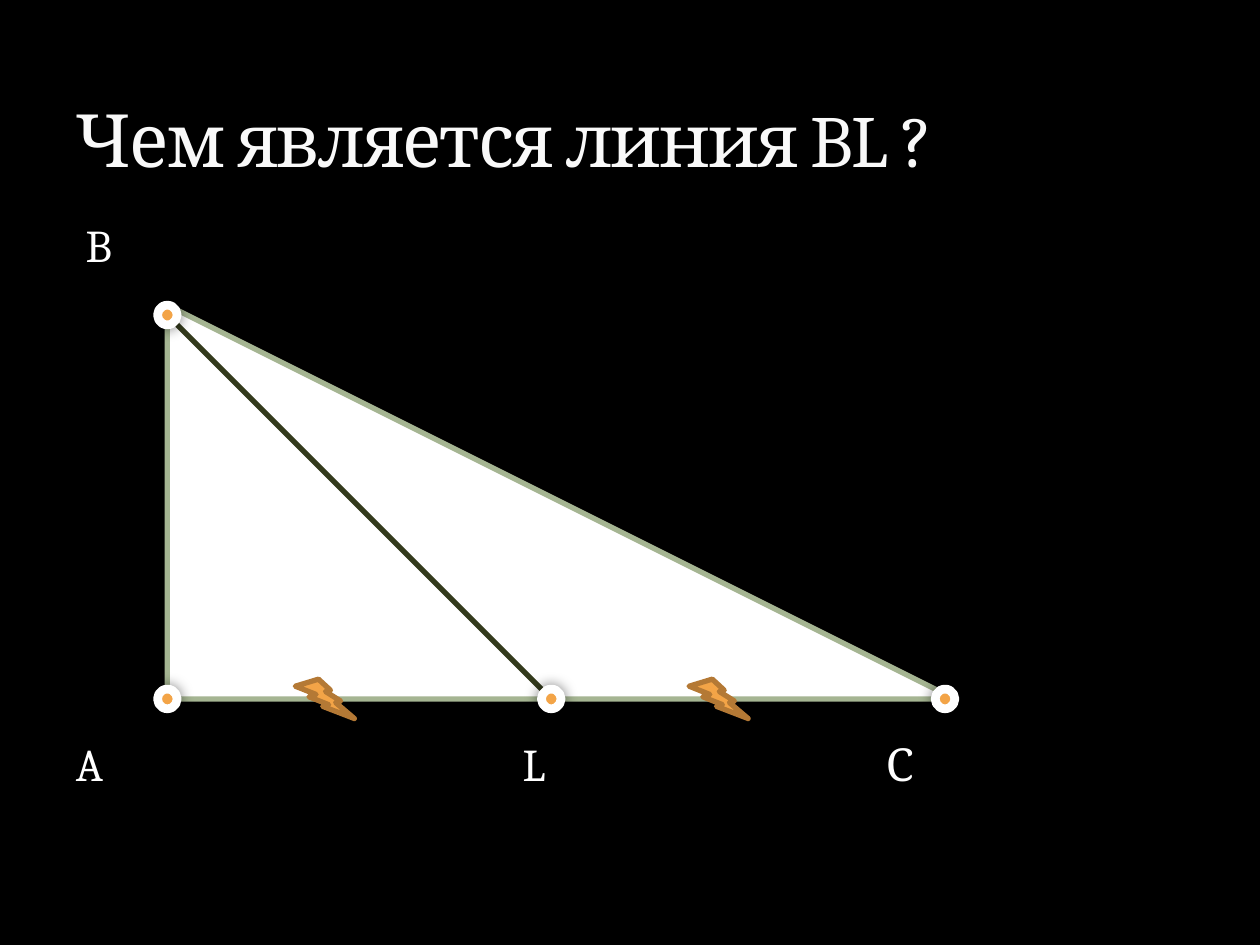
"""Build a geometry slide: a right triangle ABC with the line BL to side AC."""
from typing import NamedTuple

from lxml import etree
from pptx import Presentation
from pptx import util as u
from pptx.dml.color import RGBColor
from pptx.enum import shapes, text
from pptx.oxml import parse_xml
from pptx.oxml.ns import qn

WIDTH, HEIGHT = u.Inches(10), u.Inches(7.5)
COLUMNS, ROWS = 128, 96
FONT = "Cambria"
NAMESPACE = 'xmlns:a="http://schemas.openxmlformats.org/drawingml/2006/main"'


class Point(NamedTuple):
    column: float
    row: float


class Box(NamedTuple):
    column: float
    row: float
    columns: float
    rows: float


class Style(NamedTuple):
    fill: str
    line: str
    weight: float


class Label(NamedTuple):
    letter: str
    place: Point


A, B, L, C = Point(17, 71), Point(17, 32), Point(56, 71), Point(96, 71)
TRIANGLE = Box(17, 31, 80, 40)
BOLTS = [Box(column, 69, 6, 4) for column in (30, 70)]
LABELS = [
    Label("B", Point(8.7, 22)),
    Label("A", Point(7.7, 74.8)),
    Label("L", Point(53.1, 74.8)),
    Label("С", Point(90, 74.8)),
]
TRIANGLE_STYLE = Style("FFFFFF", "A5B592", 3)
BOLT_STYLE = Style("F3A447", "B47935", 3)
DOT_STYLE = Style("F3A447", "FFFFFF", 5)


def color(value: str) -> RGBColor:
    """Turn a hex string into a colour."""
    return RGBColor.from_string(value)


def x(columns: float) -> int:
    """Convert grid columns to a length."""
    return round(WIDTH * columns / COLUMNS)


def y(rows: float) -> int:
    """Convert grid rows to a length."""
    return round(HEIGHT * rows / ROWS)


def frame(box: Box) -> tuple[int, int, int, int]:
    """Convert a grid box to left, top, width and height."""
    return x(box.column), y(box.row), x(box.columns), y(box.rows)


def apply(target, values: dict) -> None:
    """Set each attribute named in a dict of format values."""
    for name, value in values.items():
        setattr(target, name, value)


def write(paragraph, words: str, size: float, value: str):
    """Write one formatted run and return it."""
    run = paragraph.add_run()
    run.text = words
    apply(run.font, {"name": FONT, "size": u.Pt(size), "bold": False})
    run.font.color.rgb = color(value)
    return run


def add_title(slide, words: str) -> None:
    """Place and format the title with its thin text outline."""
    title = slide.shapes.title
    apply(title, dict(zip(("left", "top", "width", "height"),
                          (u.Inches(0.5), u.Inches(0.17), u.Inches(9), u.Inches(1.33)))))
    apply(title.text_frame, {"vertical_anchor": text.MSO_ANCHOR.BOTTOM, "word_wrap": True,
                             "auto_size": text.MSO_AUTO_SIZE.NONE})
    paragraph = title.text_frame.paragraphs[0]
    paragraph.alignment = text.PP_ALIGN.LEFT
    properties = write(paragraph, words, 42, "F9F9F9").font._element
    properties.set("spc", "-100")
    properties.insert(0, parse_xml(
        f'<a:ln {NAMESPACE} w="3175"><a:solidFill><a:srgbClr val="3C4422">'
        '<a:alpha val="25000"/></a:srgbClr></a:solidFill></a:ln>'))


def add_figure(slide, kind: shapes.MSO_SHAPE, box: Box, style: Style):
    """Draw a preset shape with fill and outline."""
    shape = slide.shapes.add_shape(kind, *frame(box))
    shape.shadow.inherit = False
    shape.fill.solid()
    shape.fill.fore_color.rgb = color(style.fill)
    shape.line.color.rgb = color(style.line)
    shape.line.width = u.Pt(style.weight)
    return shape


def add_dot(slide, center: Point) -> None:
    """Mark a point with a ringed dot and a soft shadow."""
    box = Box(center.column - 1, center.row - 1, 2, 2)
    dot = add_figure(slide, shapes.MSO_SHAPE.OVAL, box, DOT_STYLE)
    dot._element.spPr.find(qn("a:effectLst")).append(parse_xml(
        f'<a:outerShdw {NAMESPACE} blurRad="95250" dist="0" dir="0" rotWithShape="0">'
        '<a:srgbClr val="000000"><a:alpha val="50000"/></a:srgbClr></a:outerShdw>'))


def add_segment(slide, start: Point, end: Point) -> None:
    """Draw a straight line between two points."""
    line = slide.shapes.add_connector(shapes.MSO_CONNECTOR.STRAIGHT, x(start.column),
                                      y(start.row), x(end.column), y(end.row))
    line.line.color.rgb = color("333A1C")
    line.line.width = u.Pt(3)
    etree.SubElement(line._element.spPr, qn("a:effectLst"))


def add_label(slide, label: Label) -> None:
    """Write the letter of a point."""
    box = slide.shapes.add_textbox(*frame(Box(*label.place, 6, 6)))
    apply(box.text_frame, {"word_wrap": True, "margin_left": 0, "margin_right": 0,
                           "margin_top": 0, "margin_bottom": 0})
    write(box.text_frame.paragraphs[0], label.letter, 26, "FFFFFF")


def main() -> None:
    """Build and save the slide."""
    presentation = Presentation()
    apply(presentation, {"slide_width": WIDTH, "slide_height": HEIGHT})
    slide = presentation.slides.add_slide(presentation.slide_layouts[5])
    slide.background.fill.solid()
    slide.background.fill.fore_color.rgb = color("000000")
    add_title(slide, "Чем является линия BL ?")
    for label in LABELS:
        add_label(slide, label)
    add_figure(slide, shapes.MSO_SHAPE.RIGHT_TRIANGLE, TRIANGLE, TRIANGLE_STYLE)
    add_segment(slide, B, L)
    for bolt in BOLTS:
        add_figure(slide, shapes.MSO_SHAPE.LIGHTNING_BOLT, bolt, BOLT_STYLE)
    for point in (B, A, C, L):
        add_dot(slide, point)
    presentation.save("out.pptx")


if __name__ == "__main__":
    main()
